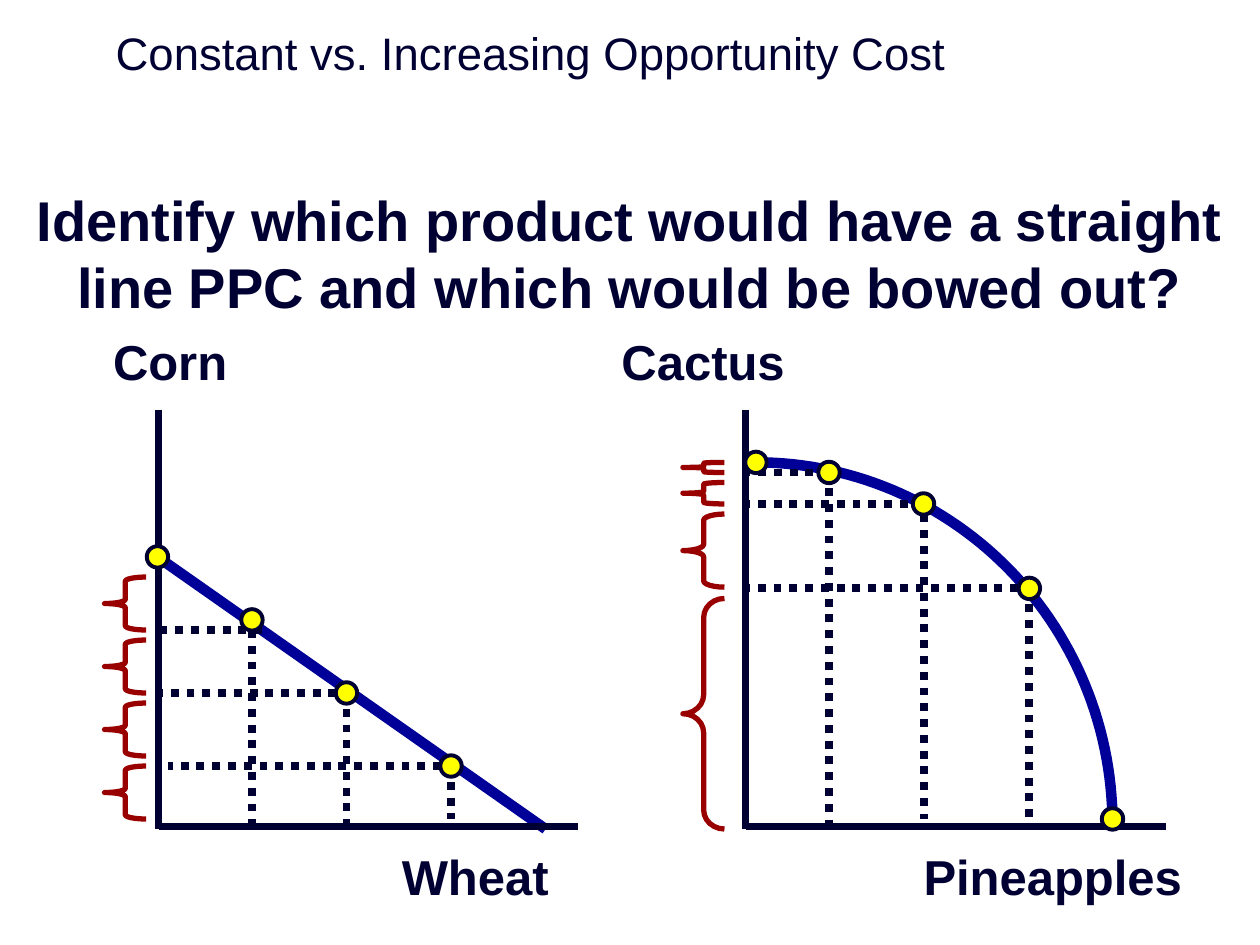
from math import cos, pi, sin

from lxml import etree
from pptx import Presentation
from pptx.dml.color import RGBColor
from pptx.enum.dml import MSO_LINE
from pptx.enum.shapes import MSO_CONNECTOR, MSO_SHAPE
from pptx.enum.text import MSO_AUTO_SIZE, PP_ALIGN
from pptx.oxml.ns import qn
from pptx.util import Inches, Pt

STRAIGHT = MSO_CONNECTOR.STRAIGHT
DOTTED = MSO_LINE.ROUND_DOT
OVAL = MSO_SHAPE.OVAL
BRACE = MSO_SHAPE.LEFT_BRACE
CENTER = PP_ALIGN.CENTER
FIT_SHAPE = MSO_AUTO_SIZE.SHAPE_TO_FIT_TEXT

COLORS = {"ink": "000032", "curve": "000099", "point": "FFFF00", "brace": "990000"}
POINT_SIZE = 0.17
BRACE_WIDTH = 0.33
AXIS_LENGTH = 3.33
AXIS_TOP, AXIS_BASE = 3.25, 6.56


def color(name):
    return RGBColor.from_string(COLORS[name])


def style_line(line, name, width):
    line.color.rgb = color(name)
    line.width = Pt(width)


def add_text(page, text, frame, size, bold=True, wrap=True):
    box = page.shapes.add_textbox(*map(Inches, frame))
    text_frame = box.text_frame
    text_frame.word_wrap = wrap
    text_frame.auto_size = FIT_SHAPE
    para = text_frame.paragraphs[0]
    para.alignment = CENTER
    span = para.add_run()
    span.text = text
    span.font.color.rgb = color("ink")
    for key, value in {"name": "Arial", "size": Pt(size), "bold": bold}.items():
        setattr(span.font, key, value)


def add_line(page, start, end, name="ink", width=4, dash=None):
    line = page.shapes.add_connector(STRAIGHT, *map(Inches, (*start, *end)))
    style_line(line.line, name, width)
    if dash:
        line.line.dash_style = dash
    etree.SubElement(line._element.spPr, qn("a:effectLst"))


def add_axes(page, x):
    add_line(page, (x, AXIS_TOP), (x, AXIS_TOP + AXIS_LENGTH))
    add_line(page, (x, AXIS_BASE), (x + AXIS_LENGTH, AXIS_BASE))


def add_guides(page, guides):
    for start, end in guides:
        add_line(page, start, end, width=4.5, dash=DOTTED)


def add_points(page, centers):
    for x, y in centers:
        frame = (x - POINT_SIZE / 2, y - POINT_SIZE / 2, POINT_SIZE, POINT_SIZE)
        point = page.shapes.add_shape(OVAL, *map(Inches, frame))
        point.shadow.inherit = False
        point.fill.solid()
        point.fill.fore_color.rgb = color("point")
        style_line(point.line, "ink", 2.25)


def add_braces(page, x, braces):
    for top, height, bend in braces:
        brace = page.shapes.add_shape(BRACE, *map(Inches, (x, top, BRACE_WIDTH, height)))
        brace.shadow.inherit = False
        brace.adjustments[0] = bend
        brace.fill.background()
        style_line(brace.line, "brace", 3)


def add_bowed_curve(page, left, top, width, height, steps=60):
    """Draw a quarter ellipse from the vertical axis down to the horizontal one."""
    angles = [pi / 2 * step / steps for step in range(steps + 1)]
    places = [(Inches(left + width * sin(a)), Inches(top + height * (1 - cos(a))))
              for a in angles]
    builder = page.shapes.build_freeform(*places[0])
    builder.add_line_segments(places[1:], close=False)
    curve = builder.convert_to_shape()
    curve.shadow.inherit = False
    curve.fill.background()
    style_line(curve.line, "curve", 6)


def draw_constant_cost(page):
    add_line(page, (1.25, 4.42), (4.33, 6.58), "curve", 6)
    add_axes(page, 1.26)
    add_guides(page, [
        ((2.08, 5), (1.25, 5)), ((2, 5), (2, 6.58)),
        ((2.67, 5.5), (1.25, 5.5)), ((2.75, 5.5), (2.75, 6.58)),
        ((3.5, 6.08), (1.33, 6.08)), ((3.58, 6.08), (3.58, 6.5)),
    ])
    add_braces(page, 0.83, [(4.58 + 0.5 * i, 0.42, 0.1) for i in range(4)])
    add_points(page, [(1.25, 4.42), (2, 4.92), (2.75, 5.5), (3.58, 6.08)])
    add_text(page, "Corn", (0, 2.58, 2.7, 0.56), 28)
    add_text(page, "Wheat ", (2.25, 6.67, 3.15, 0.56), 28)


def draw_increasing_cost(page):
    add_bowed_curve(page, 6, 3.67, 2.83, 2.87)
    add_axes(page, 5.92)
    add_guides(page, [
        ((6.58, 3.75), (5.92, 3.75)), ((6.58, 3.75), (6.58, 6.58)),
        ((7.33, 4), (5.92, 4)), ((7.33, 4.08), (7.33, 6.5)),
        ((8.08, 4.67), (5.92, 4.67)), ((8.17, 4.67), (8.17, 6.58)),
    ])
    add_braces(page, 5.42, [
        (3.67, 0.08, 0.08), (3.83, 0.17, 0.08), (4.08, 0.58, 0.15), (4.75, 1.83, 0.46),
    ])
    add_points(page, [(6, 3.67), (6.58, 3.75), (7.33, 4), (8.17, 4.67), (8.83, 6.5)])
    add_text(page, "Cactus", (4.83, 2.58, 1.5, 0.56), 28, wrap=False)
    add_text(page, "Pineapples", (7.23, 6.67, 2.25, 0.56), 28, wrap=False)


def main():
    deck = Presentation()
    deck.slide_width, deck.slide_height = Inches(10), Inches(7.5)
    page = deck.slides.add_slide(deck.slide_layouts[6])

    # Title and question
    add_text(page, "Constant vs. Increasing Opportunity Cost",
             (-0.12, 0.15, 8.67, 0.54), 26, bold=False)
    add_text(page, "Identify which product would have a straight line PPC "
             "and which would be bowed out?", (0, 1.42, 10, 1.17), 32)

    # Straight-line graph on the left, bowed-out graph on the right
    draw_constant_cost(page)
    draw_increasing_cost(page)

    deck.save("out.pptx")


if __name__ == "__main__":
    main()
